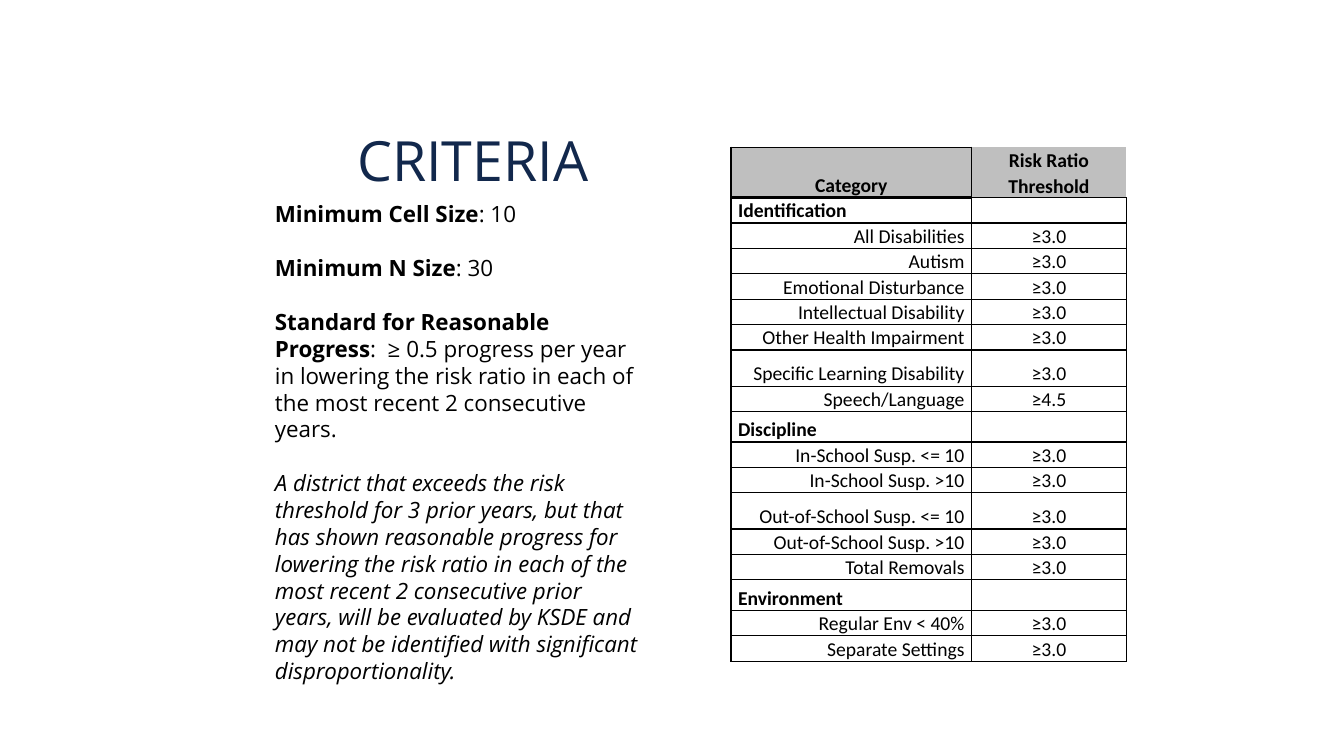
from lxml.etree import SubElement
from pptx import Presentation
from pptx.dml.color import RGBColor
from pptx.enum.text import MSO_ANCHOR as Anchor, PP_ALIGN as Align
from pptx.oxml.ns import qn
from pptx.util import Cm, Pt

SECTIONS = {
    "Identification": [
        ("All Disabilities", "≥3.0"), ("Autism", "≥3.0"),
        ("Emotional Disturbance", "≥3.0"), ("Intellectual Disability", "≥3.0"),
        ("Other Health Impairment", "≥3.0"),
        ("Specific Learning Disability", "≥3.0"), ("Speech/Language", "≥4.5"),
    ],
    "Discipline": [
        ("In-School Susp. <= 10", "≥3.0"), ("In-School Susp. >10", "≥3.0"),
        ("Out-of-School Susp. <= 10", "≥3.0"), ("Out-of-School Susp. >10", "≥3.0"),
        ("Total Removals", "≥3.0"),
    ],
    "Environment": [("Regular Env < 40%", "≥3.0"), ("Separate Settings", "≥3.0")],
}
ROW_HEIGHT = 0.64
SPECIAL_HEIGHTS = {
    "Category": 1.27, "Discipline": 0.77, "Environment": 0.77,
    "Specific Learning Disability": 0.91, "Out-of-School Susp. <= 10": 0.91,
}
CRITERIA = [
    [("Minimum Cell Size", True, False), (": 10", False, False)],
    [("Minimum N Size", True, False), (": 30", False, False)],
    [("Standard for Reasonable Progress", True, False),
     (":  ≥ 0.5 progress per year in lowering the risk ratio in each of the most "
      "recent 2 consecutive years.", False, False)],
    [("A district that exceeds the risk threshold for 3 prior years, but that has "
      "shown reasonable progress for lowering the risk ratio in each of the most "
      "recent 2 consecutive prior years, will be evaluated by KSDE and may not be "
      "identified with significant disproportionality.", False, True)],
]


def color(code):
    return RGBColor.from_string(code)


class CriteriaSlide:
    """Draws text and tables on one slide in a shared style."""

    text_font, table_font = "Open Sans", "Calibri"
    ink, navy, gray = "000000", "12284C", "BFBFBF"

    def __init__(self, deck):
        self.slide = deck.slides.add_slide(deck.slide_layouts[6])

    def run(self, paragraph, words, font, size, ink, bold=False, italic=False):
        run = paragraph.add_run()
        run.text = words
        run.font.name, run.font.size = font, Pt(size)
        run.font.bold, run.font.italic = bold, italic
        run.font.color.rgb = color(ink)

    def text(self, place, paragraphs, size, ink, align=Align.LEFT,
             anchor=Anchor.TOP, spacing=1.0, gap=0):
        frame = self.slide.shapes.add_textbox(*map(Cm, place)).text_frame
        frame.word_wrap, frame.vertical_anchor = True, anchor
        for index, runs in enumerate(paragraphs):
            paragraph = frame.add_paragraph() if index else frame.paragraphs[0]
            paragraph.alignment, paragraph.line_spacing = align, spacing
            paragraph.space_before = Pt(gap if index else 0)
            for words, bold, italic in runs:
                self.run(paragraph, words, self.text_font, size, ink, bold, italic)

    def border(self, cell, side, width):
        line = SubElement(cell._tc.get_or_add_tcPr(), qn(f"a:ln{side}"), w=str(Pt(width)))
        if width:
            fill = SubElement(line, qn("a:solidFill"))
            SubElement(fill, qn("a:srgbClr"), val=self.ink)
        else:
            SubElement(line, qn("a:noFill"))

    def cell(self, cell, words, align, bold, fill, widths):
        cell.margin_left = cell.margin_right = Cm(0.18)
        cell.margin_top = cell.margin_bottom = 0
        cell.vertical_anchor = Anchor.BOTTOM
        for side in "LRTB":
            self.border(cell, side, widths.get(side, 1))
        if fill:
            cell.fill.solid()
            cell.fill.fore_color.rgb = color(fill)
        else:
            cell.fill.background()
        paragraph = cell.text_frame.paragraphs[0]
        paragraph.alignment, paragraph.line_spacing = align, 1.07
        if words:
            self.run(paragraph, words, self.table_font, 14, self.ink, bold)
        else:
            SubElement(paragraph._p, qn("a:endParaRPr"), sz="1400")

    def table(self, left, top, column_widths, header, sections):
        rows = [(header, "header")]
        for section, entries in sections.items():
            rows.append(((section, ""), "section"))
            rows += [(entry, "entry") for entry in entries]
        heights = [SPECIAL_HEIGHTS.get(words[0], ROW_HEIGHT) for words, _ in rows]
        table = self.slide.shapes.add_table(
            len(rows), len(column_widths), Cm(left), Cm(top),
            Cm(sum(column_widths)), Cm(sum(heights))).table
        table.first_row = table.horz_banding = False
        for column, width in zip(table.columns, column_widths):
            column.width = Cm(width)
        label_align = {"header": Align.CENTER, "section": Align.LEFT, "entry": Align.RIGHT}
        special_borders = {(0, 0): {"B": 2.25}, (0, 1): {"T": 0, "R": 0}, (1, 0): {"T": 2.25}}
        for r, ((label, threshold), role) in enumerate(rows):
            table.rows[r].height = Cm(heights[r])
            fill = self.gray if role == "header" else None
            for c, (words, align) in enumerate(
                    [(label, label_align[role]), (threshold, Align.CENTER)]):
                self.cell(table.cell(r, c), words, align, role != "entry", fill,
                          special_borders.get((r, c), {}))


def main():
    deck = Presentation()
    deck.slide_width, deck.slide_height = Cm(33.87), Cm(19.05)
    page = CriteriaSlide(deck)
    page.text((6.05, 3.3, 11.73, 1.63), [[("CRITERIA", False, False)]], 39.6, page.navy,
              Align.CENTER, Anchor.MIDDLE, 0.9)
    page.text((6.68, 4.93, 9.8, 12.57), CRITERIA, 16, page.ink, gap=19.2)
    page.table(18.42, 3.71, (6.07, 3.89), ("Category", "Risk Ratio Threshold"), SECTIONS)
    deck.save("out.pptx")


if __name__ == "__main__":
    main()
